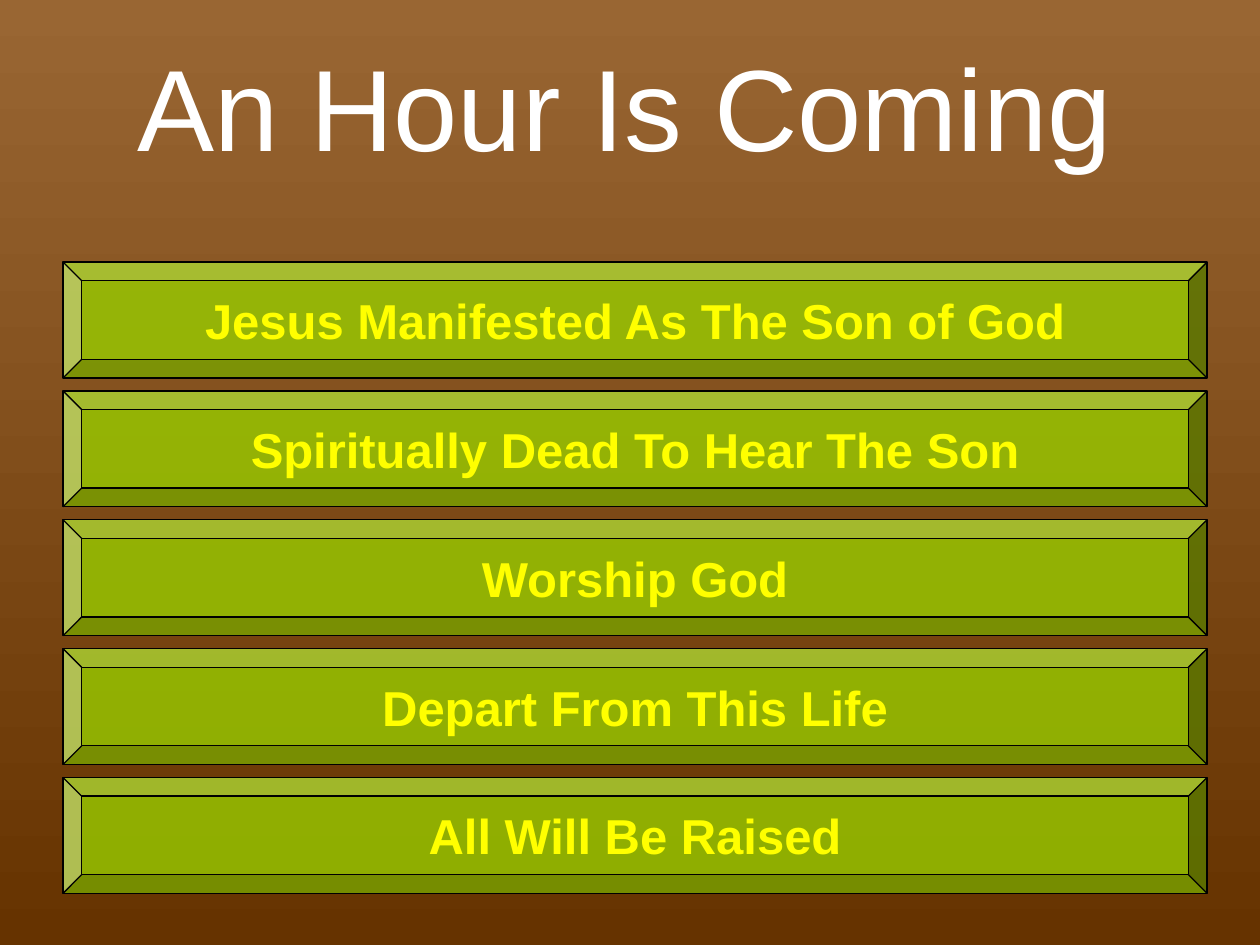
"""Build the "An Hour Is Coming" slide with its five bevelled topic bars."""
import lxml.etree
import pptx
import pptx.dml.color
import pptx.enum.shapes
import pptx.enum.text
import pptx.oxml.ns
import pptx.util

Inches = pptx.util.Inches
RGBColor = pptx.dml.color.RGBColor

LIGHT_BROWN = RGBColor(0x99, 0x66, 0x33)
DARK_BROWN = RGBColor(0x66, 0x33, 0x00)
GREEN = RGBColor(0x99, 0xCC, 0x00)
YELLOW = RGBColor(0xFF, 0xFF, 0x00)
WHITE = RGBColor(0xFF, 0xFF, 0xFF)
BLACK = RGBColor(0x00, 0x00, 0x00)

TOPICS = [
    "Jesus Manifested As The Son of God",
    "Spiritually Dead To Hear The Son",
    "Worship God",
    "Depart From This Life",
    "All Will Be Raised",
]
FIRST_TOP, LAST_TOP = 2.08, 6.17


class TopicSlide:
    """Holds the style and the current slide."""

    font_name = "Arial"
    title_size = 66
    topic_size = 28
    bevel_depth = 0.161
    opacity = 80

    def __init__(self, slide):
        self.slide = slide

    def background(self, top_color, bottom_color):
        fill = self.slide.background.fill
        fill.gradient()
        fill.gradient_angle = 270
        for stop, color in zip(fill.gradient_stops, (top_color, bottom_color)):
            stop.color.rgb = color

    def add_words(self, frame, words, size, color, bold=False):
        run = frame.paragraphs[0].add_run()
        run.text = words
        run.font.name = self.font_name
        run.font.size = pptx.util.Pt(size)
        run.font.bold = bold
        run.font.color.rgb = color

    def title(self, words, left, top, width, height):
        heading = self.slide.shapes.add_textbox(
            Inches(left), Inches(top), Inches(width), Inches(height))
        frame = heading.text_frame
        frame.word_wrap = False
        frame.auto_size = pptx.enum.text.MSO_AUTO_SIZE.SHAPE_TO_FIT_TEXT
        self.add_words(frame, words, self.title_size, WHITE)

    def topic_bar(self, words, left, top, width, height):
        bar = self.slide.shapes.add_shape(
            pptx.enum.shapes.MSO_SHAPE.BEVEL,
            Inches(left), Inches(top), Inches(width), Inches(height))
        bar.adjustments[0] = self.bevel_depth
        bar.shadow.inherit = False
        bar.fill.solid()
        bar.fill.fore_color.rgb = GREEN
        qn = pptx.oxml.ns.qn
        tint = bar.element.spPr.find(qn("a:solidFill")).find(qn("a:srgbClr"))
        lxml.etree.SubElement(tint, qn("a:alpha"), val=str(self.opacity * 1000))
        bar.line.color.rgb = BLACK
        bar.line.width = pptx.util.Pt(0.75)
        frame = bar.text_frame
        frame.word_wrap = False
        frame.vertical_anchor = pptx.enum.text.MSO_ANCHOR.MIDDLE
        frame.paragraphs[0].alignment = pptx.enum.text.PP_ALIGN.CENTER
        self.add_words(frame, words, self.topic_size, YELLOW, bold=True)


def main():
    deck = pptx.Presentation()
    deck.slide_width, deck.slide_height = Inches(10), Inches(7.5)
    page = TopicSlide(deck.slides.add_slide(deck.slide_layouts[6]))
    page.background(LIGHT_BROWN, DARK_BROWN)
    page.title("An Hour Is Coming", 0.99, 0.24, 8.03, 1.21)
    pitch = (LAST_TOP - FIRST_TOP) / (len(TOPICS) - 1)
    for row, topic in enumerate(TOPICS):
        page.topic_bar(topic, 0.5, FIRST_TOP + row * pitch, 9.08, 0.92)
    deck.save("out.pptx")


if __name__ == "__main__":
    main()
